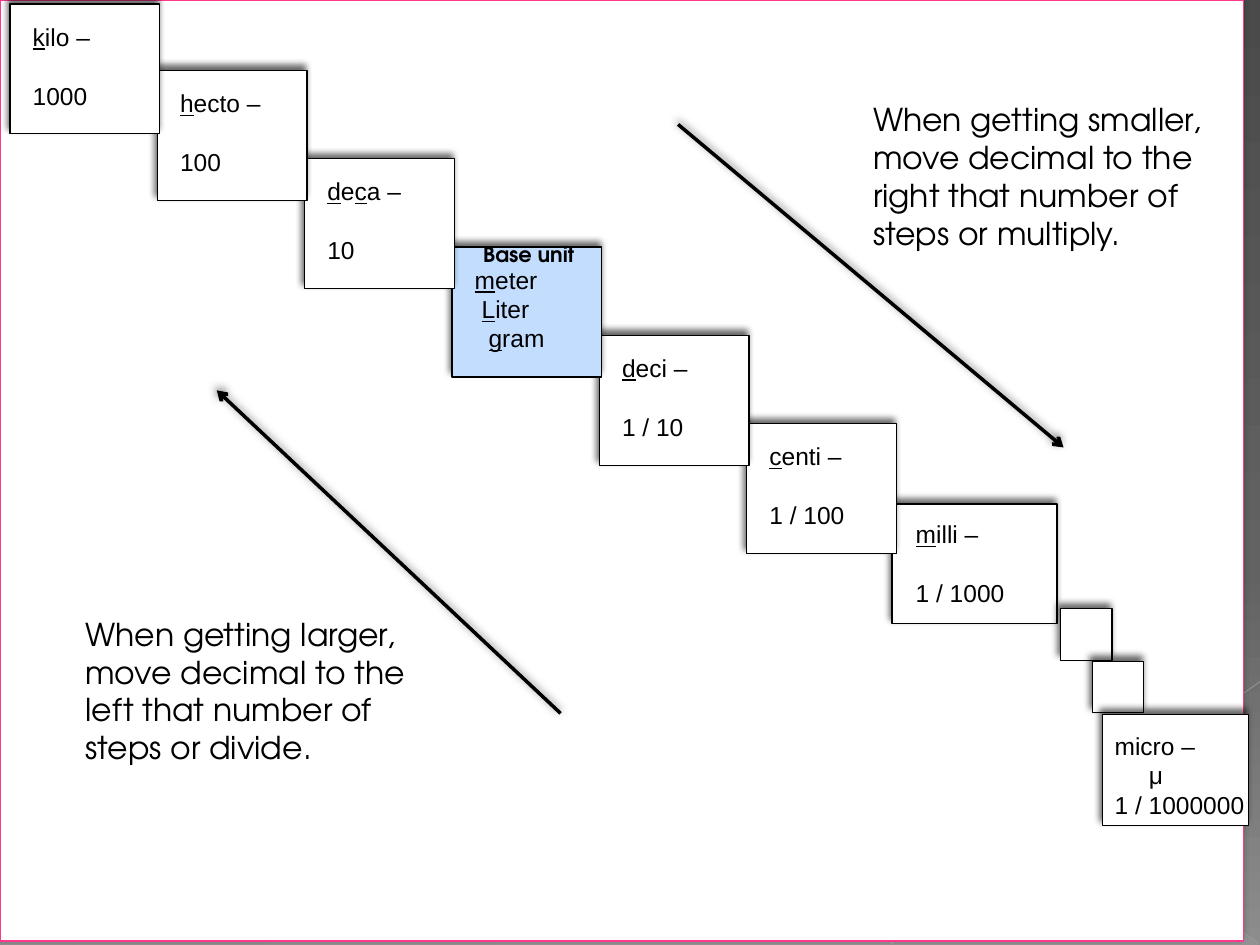
from lxml import etree
from pptx import Presentation
from pptx.dml.color import RGBColor
from pptx.enum.shapes import MSO_CONNECTOR, MSO_SHAPE
from pptx.enum.text import MSO_AUTO_SIZE
from pptx.oxml.ns import qn
from pptx.util import Cm, Pt

RECT, TRIANGLE = MSO_SHAPE.RECTANGLE, MSO_SHAPE.RIGHT_TRIANGLE
STRAIGHT = MSO_CONNECTOR.STRAIGHT
GROW = MSO_AUTO_SIZE.SHAPE_TO_FIT_TEXT

BLACK = RGBColor(0x00, 0x00, 0x00)
WHITE = RGBColor(0xFF, 0xFF, 0xFF)
BLUE = RGBColor(0xC3, 0xDD, 0xFF)
PINK = RGBColor(0xFF, 0x38, 0x8C)
DARK = RGBColor(0x4A, 0x4A, 0x4A)
MID = RGBColor(0x62, 0x62, 0x62)
LIGHT = RGBColor(0x8C, 0x8C, 0x8C)
SHEEN = RGBColor(0xD2, 0xD2, 0xD2)
RAY = RGBColor(0xBF, 0xBF, 0xBF)
RAY_SHORT = RGBColor(0xC6, 0xC6, 0xC6)

SANS, DISPLAY = "Arial", "TeX Gyre Adventor"

STEPS = ["_k_ilo –|1000", "_h_ecto –|100", "_d_e_c_a –|10", None,
         "_d_eci –|1 / 10", "_c_enti –|1 / 100"]
STEP_W, STEP_H = 3.02, 2.62
LABEL_W, LABEL_H = 2.57, 2.16


def add_child(parent, tag, **attrs):
    """Append a DrawingML element with the given attributes."""
    child = etree.SubElement(parent, qn(tag))
    for name, value in attrs.items():
        child.set(name, str(value))
    return child


def set_gradient(fill, element, stops, angle):
    """Give a fill its gradient from (position, colour, opacity) stops."""
    fill.gradient()
    grad = next(element.iter(qn("a:gradFill")))
    for child in list(grad):
        grad.remove(child)
    gs_list = add_child(grad, "a:gsLst")
    for pos, color, opacity in stops:
        gs = add_child(gs_list, "a:gs", pos=pos * 1000)
        clr = add_child(gs, "a:srgbClr", val=color)
        add_child(clr, "a:alpha", val=opacity * 1000)
    add_child(grad, "a:lin", ang=angle * 60000, scaled=0)


def add_shadow(sp, opacity, blur, dist):
    """Cast a soft black shadow up and to the left."""
    effects = add_child(sp.element.spPr, "a:effectLst")
    shadow = add_child(effects, "a:outerShdw", blurRad=Pt(blur), dist=Pt(dist),
                       dir=245 * 60000, algn="tl", rotWithShape=0)
    clr = add_child(shadow, "a:srgbClr", val=BLACK)
    add_child(clr, "a:alpha", val=opacity * 1000)


def add_box(slide, x, y, w, h, fill=WHITE, line=BLACK):
    """Draw a thin-outlined rectangle with a shadow."""
    sp = slide.shapes.add_shape(RECT, Cm(x), Cm(y), Cm(w), Cm(h))
    sp.fill.solid()
    sp.fill.fore_color.rgb = fill
    sp.line.color.rgb = line
    sp.line.width = Pt(0.75)
    add_shadow(sp, 60, 4, 3)


def add_line(slide, x1, y1, x2, y2, color, width):
    """Draw a straight line and return it."""
    cxn = slide.shapes.add_connector(STRAIGHT, Cm(x1), Cm(y1), Cm(x2), Cm(y2))
    cxn.line.color.rgb = color
    cxn.line.width = Pt(width)
    return cxn


def add_text(slide, x, y, w, h, text, font=SANS, size=14, bold=False,
             gap=0, indents=(0, 0, 0)):
    """Write lines split at bars, underlining what stands between underscores."""
    tf = slide.shapes.add_textbox(Cm(x), Cm(y), Cm(w), Cm(h)).text_frame
    tf.word_wrap = True
    tf.auto_size = GROW
    for i, (line, indent) in enumerate(zip(text.split("|"), indents)):
        p = tf.add_paragraph() if i else tf.paragraphs[0]
        p.space_before = Pt(gap if i else 0)
        p._p.get_or_add_pPr().set("marL", str(Cm(indent)))
        for n, part in enumerate(line.split("_")):
            if part:
                r = p.add_run()
                r.text = part
                r.font.name = font
                r.font.size = Pt(size)
                r.font.bold = bold
                r.font.underline = n % 2 == 1
                r.font.color.rgb = BLACK


def add_backdrop(slide, w, h):
    """Lay out the grey gradient, its faint rays and the white panel."""
    set_gradient(slide.background.fill, slide.element,
                 [(0, DARK, 100), (60, MID, 100), (100, LIGHT, 100)], 90)
    sp = slide.shapes.add_shape(TRIANGLE, Cm(0.03), Cm(0.05),
                                Cm(w - 0.05), Cm(h - 0.05))
    sp.shadow.inherit = False
    sp.line.fill.background()
    set_gradient(sp.fill, sp.element,
                 [(0, SHEEN, 10), (70, SHEEN, 8), (100, SHEEN, 1)], 133)
    for ends, color, width, opacity in [
            ((0, 0.03, w - 0.03, h - 0.03), RAY, 0.39, 35),
            ((w, 13.74, 17.96, h - 0.03), RAY_SHORT, 0.47, 45)]:
        cxn = add_line(slide, *ends, color, width)
        clr = next(cxn.element.spPr.iter(qn("a:srgbClr")))
        add_child(clr, "a:alpha", val=opacity * 1000)
        add_child(cxn.element.spPr, "a:effectLst")
    add_box(slide, 0, 0, w - 0.33, h - 0.08, line=PINK)


def add_base_unit(slide, x, y):
    """Label the base unit step with its heading and three units."""
    add_text(slide, x + 0.21, y + 0.23, LABEL_W, LABEL_H,
             "_m_eter|_L_iter|_g_ram", indents=(0, 0.14, 0.28))
    add_text(slide, x - 0.21, y - 0.23, 3.38, 0.81, "Base unit",
             DISPLAY, 12, bold=True, indents=(0.59,))


def add_staircase(slide, x, y):
    """Stack the prefix steps from the lowest up, keeping the top one on the slide."""
    for i, label in reversed(list(enumerate(STEPS))):
        left, top = x + 2.97 * i, max(y + 1.78 * i, 0.08)
        add_box(slide, left, top, STEP_W, STEP_H, WHITE if label else BLUE)
        if label:
            add_text(slide, left + 0.21, top + 0.23, LABEL_W, LABEL_H,
                     label, gap=17)
        else:
            add_base_unit(slide, left, top)


def add_small_steps(slide, x, y):
    """Draw the milli step, two blank steps and the micro step."""
    add_box(slide, x, y, 3.33, 2.41)
    add_text(slide, x + 0.23, y + 0.18, LABEL_W, LABEL_H,
             "_m_illi –|1 / 1000", gap=17)
    for i in range(2):
        add_box(slide, x + 3.4 + 0.64 * i, y + 2.11 + 1.06 * i, 1.04, 1.04)
    add_box(slide, x + 4.24, y + 4.24, 2.95, 2.24)
    add_text(slide, x + 4.24, y + 4.45, 3.91, 2.01,
             "micro –|μ|1 / 1000000", indents=(0, 0.69, 0))


def add_rule(slide, x, y, text, arrow):
    """Write a conversion rule and draw its arrow from (dx, dy) to (dx, dy)."""
    dx1, dy1, dx2, dy2 = arrow
    cxn = add_line(slide, x + dx1, y + dy1, x + dx2, y + dy2, BLACK, 2)
    add_child(next(cxn.element.iter(qn("a:ln"))), "a:tailEnd", type="arrow")
    add_shadow(cxn, 50, 5, 2)
    add_text(slide, x, y, 7.19, 3.33, text, DISPLAY, 18)


def main():
    """Build the metric prefix slide."""
    prs = Presentation()
    prs.slide_width, prs.slide_height = Cm(25.4), Cm(19.05)
    s = prs.slides.add_slide(prs.slide_layouts[6])
    add_backdrop(s, 25.4, 19.05)
    add_small_steps(s, 17.98, 10.16)
    add_rule(s, 17.35, 1.9, "When getting smaller, move decimal to the right "
             "that number of steps or multiply.", (-3.68, 0.61, 4.09, 7.12))
    add_rule(s, 1.47, 12.27, "When getting larger, move decimal to the left "
             "that number of steps or divide.", (9.83, 2.11, 2.9, -4.4))
    add_staircase(s, 0.2, -0.36)
    prs.save("out.pptx")


if __name__ == "__main__":
    main()
